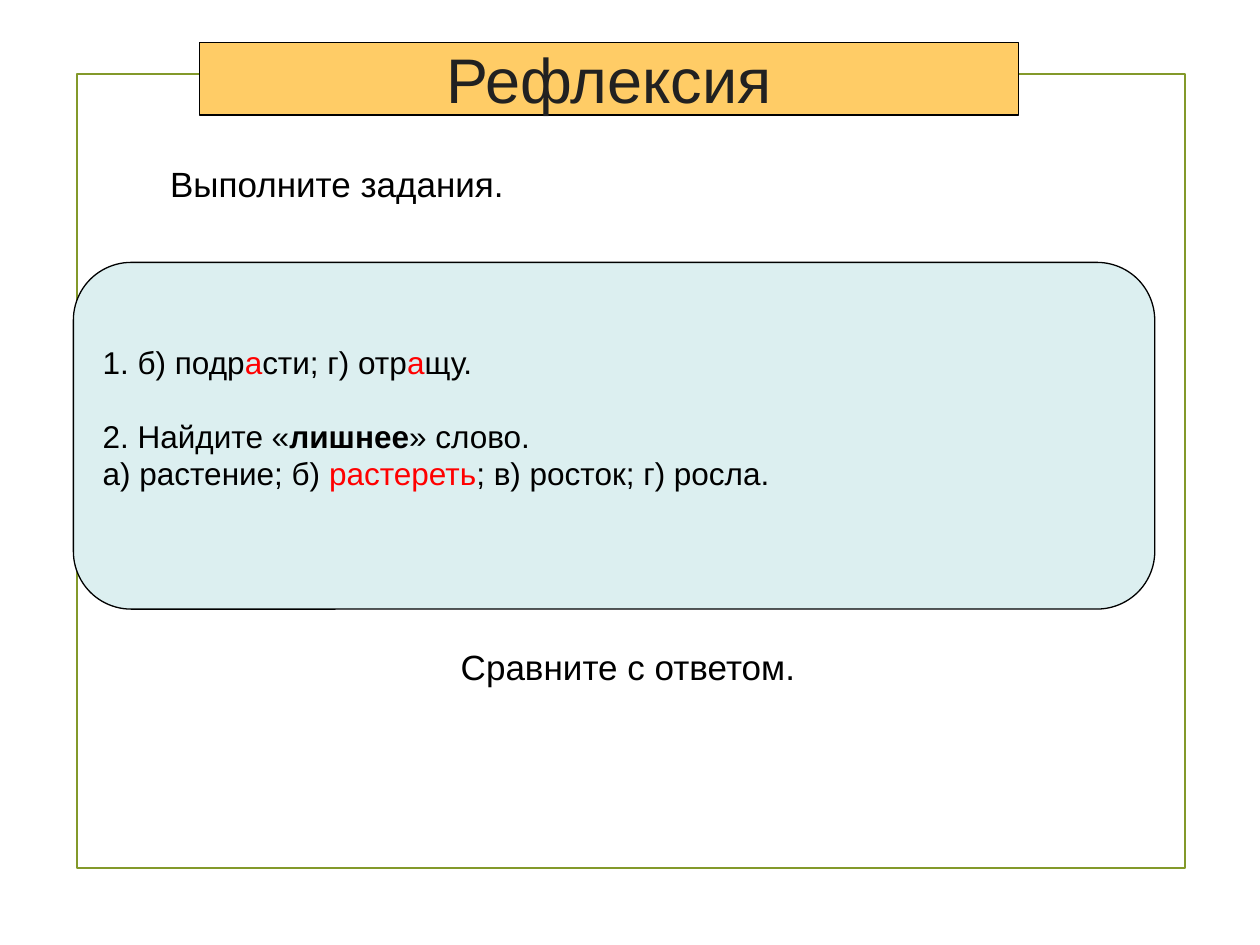
from dataclasses import dataclass

from lxml.etree import SubElement
from pptx import Presentation
from pptx.dml.color import RGBColor
from pptx.enum.shapes import MSO_SHAPE
from pptx.enum.text import MSO_ANCHOR, MSO_AUTO_SIZE, PP_ALIGN
from pptx.oxml.ns import qn
from pptx.shapes.autoshape import Shape
from pptx.slide import Slide
from pptx.util import Cm, Pt

BLACK = RGBColor(0x00, 0x00, 0x00)
RED = RGBColor(0xFF, 0x00, 0x00)
CHARCOAL = RGBColor(0x21, 0x21, 0x21)
OLIVE = RGBColor(0x83, 0x99, 0x2A)
AMBER = RGBColor(0xFF, 0xCC, 0x66)
PALE_BLUE = RGBColor(0xDC, 0xEF, 0xF0)
FONT = "Arial"


@dataclass
class Area:
    left: float
    top: float
    width: float
    height: float

    def lengths(self) -> tuple:
        return Cm(self.left), Cm(self.top), Cm(self.width), Cm(self.height)


@dataclass
class Span:
    text: str
    color: RGBColor = BLACK
    bold: bool = False


@dataclass
class Caption:
    text: str
    area: Area
    align: PP_ALIGN
    left_inset: float


CAPTIONS = [
    Caption("Выполните задания.", Area(3.18, 3.18, 13.34, 1.27), PP_ALIGN.LEFT, 0.25),
    Caption("Сравните с ответом.", Area(6.55, 12.91, 11.43, 1.07), PP_ALIGN.CENTER, 1.04),
]

# Each task line with the space before it in points
TASK_LINES = [
    (0, [Span("1. б) подр"), Span("а", RED), Span("сти; г) отр"),
         Span("а", RED), Span("щу.")]),
    (20.7, [Span("2. Найдите «"), Span("лишнее", bold=True), Span("» слово.")]),
    (0, [Span("а) растение; б)"), Span(" растереть", RED),
         Span("; в) росток; г) росла.")]),
]


def set_outline(shape: Shape, color: RGBColor, width: float) -> None:
    shape.line.color.rgb = color
    shape.line.width = Pt(width)


def set_fill(shape: Shape, color: RGBColor) -> None:
    shape.fill.solid()
    shape.fill.fore_color.rgb = color


def add_frame(page: Slide) -> None:
    frame = page.shapes.add_shape(MSO_SHAPE.RECTANGLE, *Area(1.55, 1.5, 22.34, 16).lengths())
    frame.shadow.inherit = False
    frame.fill.background()
    set_outline(frame, OLIVE, 1.25)


def add_caption(page: Slide, caption: Caption) -> None:
    box = page.shapes.add_textbox(*caption.area.lengths())
    text_frame = box.text_frame
    text_frame.word_wrap = True
    text_frame.margin_left = Cm(caption.left_inset)
    text_frame.margin_top = Cm(0.2)
    text_frame.text = caption.text
    para = text_frame.paragraphs[0]
    para.alignment = caption.align
    para.line_spacing = 0.9
    para.font.name = FONT
    para.font.size = Pt(20)
    para.font.color.rgb = BLACK


def add_task_panel(page: Slide) -> None:
    panel = page.shapes.add_shape(
        MSO_SHAPE.ROUNDED_RECTANGLE, *Area(1.48, 5.29, 21.8, 6.99).lengths())
    panel.shadow.inherit = False
    set_fill(panel, PALE_BLUE)
    set_outline(panel, BLACK, 0.75)
    text_frame = panel.text_frame
    text_frame.word_wrap = True
    text_frame.vertical_anchor = MSO_ANCHOR.MIDDLE
    text_frame.margin_bottom = Cm(0.86)
    for index, (space, spans) in enumerate(TASK_LINES):
        para = text_frame.paragraphs[0] if index == 0 else text_frame.add_paragraph()
        para.alignment = PP_ALIGN.LEFT
        para.space_before = Pt(space)
        for span in spans:
            run = para.add_run()
            run.text = span.text
            run.font.name = FONT
            run.font.size = Pt(18)
            run.font.bold = span.bold
            run.font.color.rgb = span.color


def place_title(page: Slide) -> None:
    title = page.shapes.title
    title.left, title.top, title.width, title.height = Area(4.02, 0.85, 16.51, 1.47).lengths()
    # Rounded outline for the title placeholder
    geometry = SubElement(title.element.spPr, qn("a:prstGeom"), prst="roundRect")
    SubElement(geometry, qn("a:avLst"))
    set_fill(title, AMBER)
    set_outline(title, BLACK, 0.75)
    text_frame = title.text_frame
    text_frame.text = "Рефлексия"
    text_frame.word_wrap = True
    text_frame.auto_size = MSO_AUTO_SIZE.NONE
    text_frame.vertical_anchor = MSO_ANCHOR.MIDDLE
    para = text_frame.paragraphs[0]
    para.alignment = PP_ALIGN.CENTER
    para.font.name = FONT
    para.font.size = Pt(36)
    para.font.color.rgb = CHARCOAL
    # Bring the title in front of the frame
    title.element.getparent().append(title.element)


def main() -> None:
    deck = Presentation()
    deck.slide_width, deck.slide_height = Cm(25.4), Cm(19.05)
    page = deck.slides.add_slide(deck.slide_layouts[5])
    add_frame(page)
    for caption in CAPTIONS:
        add_caption(page, caption)
    add_task_panel(page)
    place_title(page)
    deck.save("out.pptx")


if __name__ == "__main__":
    main()
